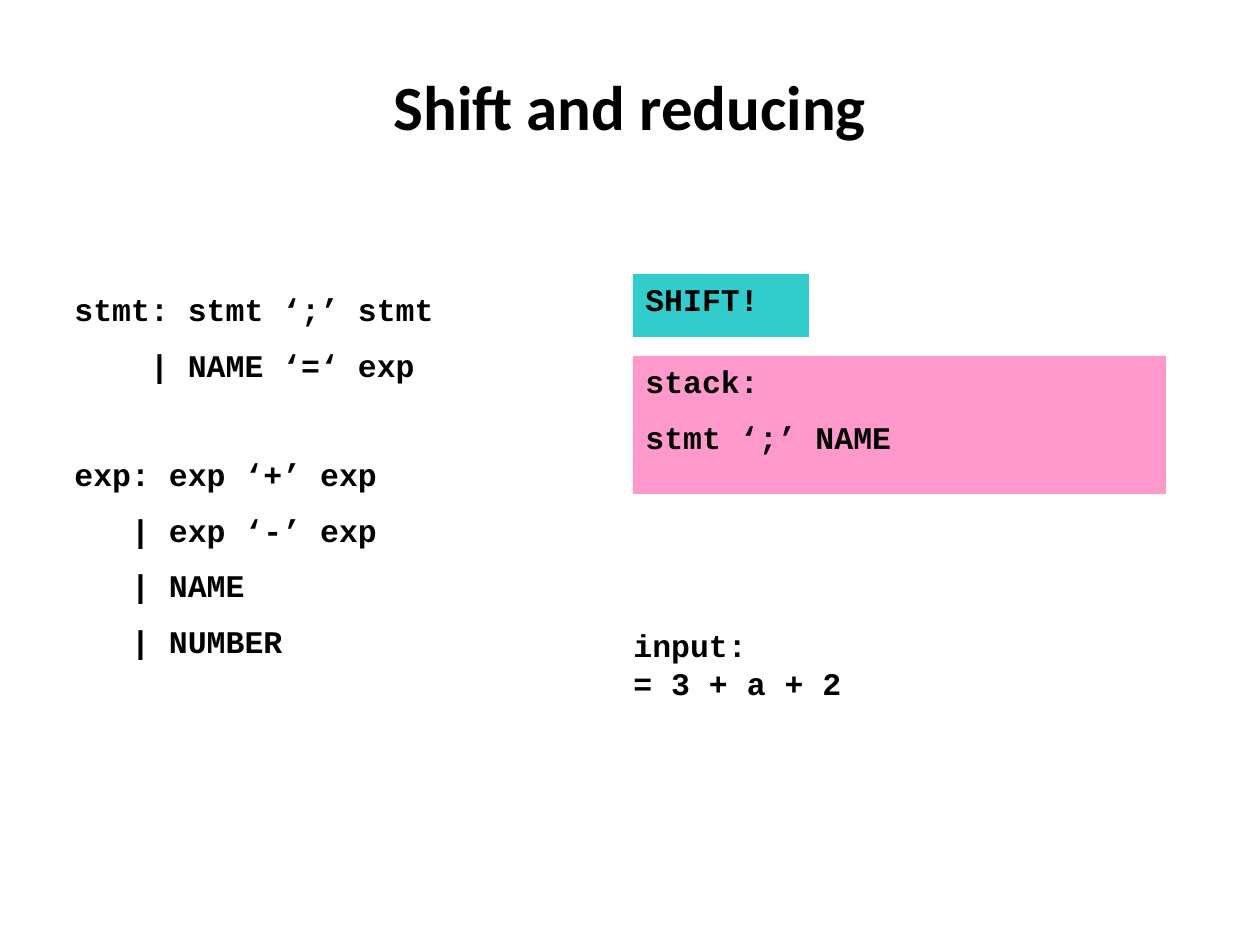
from pptx import Presentation
from pptx import util as u
from pptx.dml.color import RGBColor
from pptx.enum import shapes, text

BLACK = RGBColor(0x00, 0x00, 0x00)
PINK = RGBColor(0xFF, 0x99, 0xCC)
TEAL = RGBColor(0x33, 0xCC, 0xCC)

CODE_SIZE = 18
CHARACTER_WIDTH = 0.6 * CODE_SIZE
LINE_HEIGHT = 20.4
HALF_LINE = LINE_HEIGHT / 2


def px(length):
    return u.Emu(round(length * 914400 / 126))


def add_run(paragraph, words, font_name, size):
    run = paragraph.add_run()
    run.text = words
    run.font.name = font_name
    run.font.size = u.Pt(size)
    run.font.bold = True
    run.font.color.rgb = BLACK


def add_code(frame, lines, gap=0):
    frame.word_wrap = True
    frame.vertical_anchor = text.MSO_ANCHOR.TOP
    for index, (indent, words, blank_before) in enumerate(lines):
        paragraph = frame.paragraphs[0] if index == 0 else frame.add_paragraph()
        paragraph.alignment = text.PP_ALIGN.LEFT
        if index:
            blank_height = blank_before * (LINE_HEIGHT + gap)
            paragraph.space_before = u.Pt(gap + blank_height)
        properties = paragraph._p.get_or_add_pPr()
        properties.set("marL", str(u.Pt(indent * CHARACTER_WIDTH)))
        properties.set("indent", "0")
        add_run(paragraph, words, "Courier New", CODE_SIZE)


def add_panel(slide, box, color):
    panel = slide.shapes.add_shape(
        shapes.MSO_SHAPE.RECTANGLE, *(px(length) for length in box))
    panel.shadow.inherit = False
    panel.fill.solid()
    panel.fill.fore_color.rgb = color
    panel.line.fill.background()
    return panel.text_frame


def add_text_frame(slide, box):
    return slide.shapes.add_textbox(*(px(length) for length in box)).text_frame


def add_title(slide, box):
    frame = add_text_frame(slide, box)
    frame.word_wrap = True
    frame.vertical_anchor = text.MSO_ANCHOR.MIDDLE
    paragraph = frame.paragraphs[0]
    paragraph.alignment = text.PP_ALIGN.CENTER
    add_run(paragraph, "Shift and reducing", "Calibri", 36)


def add_grammar(slide, box):
    add_code(add_text_frame(slide, box), [
        (0, "stmt: stmt ‘;’ stmt", 0),
        (4, "| NAME ‘=‘ exp", 0),
        (0, "exp: exp ‘+’ exp", 1),
        (3, "| exp ‘-’ exp", 0),
        (3, "| NAME", 0),
        (3, "| NUMBER", 0),
    ], HALF_LINE)


def add_parser_state(slide, box):
    left, top, width, height = box
    add_code(add_text_frame(slide, (left, top + 346, 278, 113)),
             [(0, "input:", 0), (0, "= 3 + a + 2", 0)])
    panel_left = left + 12
    stack = add_panel(slide, (panel_left, top + 82, width - 12, 138), PINK)
    add_code(stack, [(0, "stack:", 0), (0, "stmt ‘;’ NAME", 0)], HALF_LINE)
    action = add_panel(slide, (panel_left, top, 176, 63), TEAL)
    add_code(action, [(0, "SHIFT!", 0)])


def main():
    presentation = Presentation()
    presentation.slide_width = px(1260)
    presentation.slide_height = px(945)
    slide = presentation.slides.add_slide(presentation.slide_layouts[6])
    add_title(slide, (63, 38, 1134, 135))
    add_grammar(slide, (62, 284, 513, 515))
    add_parser_state(slide, (621, 274, 545, 459))
    presentation.save("out.pptx")


if __name__ == "__main__":
    main()
